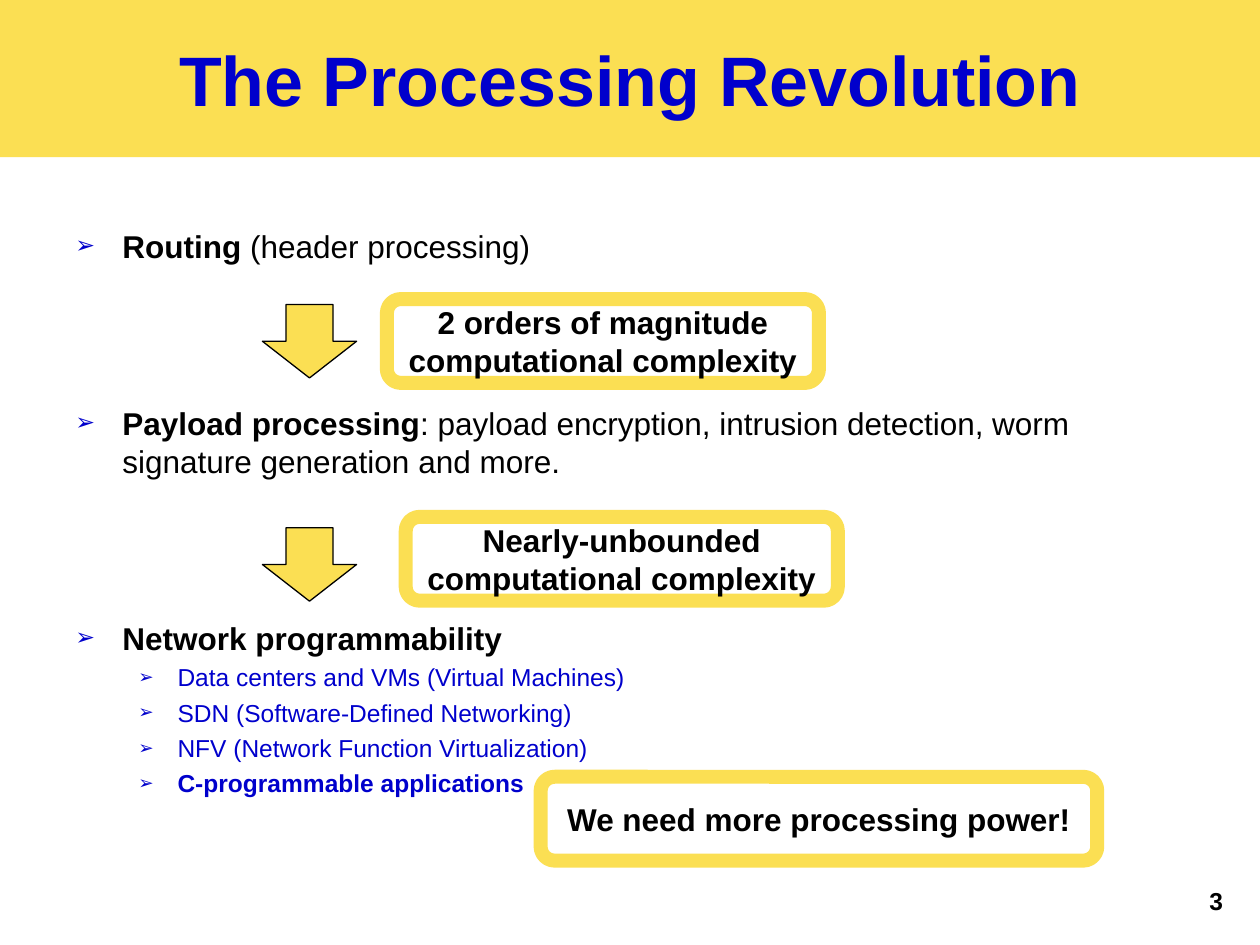
from lxml.etree import SubElement as add_node
from pptx import Presentation as Deck
from pptx.dml.color import RGBColor as Rgb
from pptx.enum.shapes import MSO_SHAPE as Shape
from pptx.enum.text import MSO_ANCHOR as Anchor, PP_ALIGN as Align
from pptx.oxml.ns import qn
from pptx.util import Cm, Pt

YELLOW, BLUE, BLACK, WHITE = "FBDF53", "0000CC", "000000", "FFFFFF"


def paint(color_format, value):
    color_format.rgb = Rgb.from_string(value)


def write(para, text, size, color=BLACK, bold=True):
    span = para.add_run()
    span.text = text
    for name, value in {"name": "Arial", "size": Pt(size), "bold": bold}.items():
        setattr(span.font, name, value)
    paint(span.font.color, color)


deck = Deck()
deck.slide_width, deck.slide_height = Cm(25.4), Cm(19.05)
page = deck.slides.add_slide(deck.slide_layouts[6])

number = page.shapes.add_textbox(Cm(24.13), Cm(17.73), Cm(1.27), Cm(1.32))
write(number.text_frame.paragraphs[0], "3", 14)

body = page.shapes.add_textbox(Cm(1.27), Cm(4.45), Cm(21.16), Cm(13.33))
body.text_frame.word_wrap = True
levels = [
    {"size": 18, "color": BLACK, "left": Cm(0.95), "hang": Cm(0.95)},
    {"size": 14, "color": BLUE, "left": Cm(2.06), "hang": Cm(0.79)},
]
items = [
    (0, 0, "Routing", " (header processing)"),
    (0, 79.5, "Payload processing",
     ": payload encryption, intrusion detection, worm signature generation and more."),
    (0, 79.5, "Network programmability", ""),
    (1, 3.4, "", "Data centers and VMs (Virtual Machines)"),
    (1, 3.4, "", "SDN (Software-Defined Networking)"),
    (1, 3.4, "", "NFV (Network Function Virtualization)"),
    (1, 3.4, "C-programmable applications", ""),
]
for index, (level, gap, strong, plain) in enumerate(items):
    frame = body.text_frame
    para = frame.add_paragraph() if index else frame.paragraphs[0]
    style = levels[level]
    for name, value in {"level": level, "space_before": Pt(gap)}.items():
        setattr(para, name, value)
    for text, bold in ((strong, True), (plain, False)):
        if text:
            write(para, text, style["size"], style["color"], bold)
    props = para._p.get_or_add_pPr()
    props.set("marL", str(style["left"]))
    props.set("indent", str(-style["hang"]))
    bullet_color = add_node(props, qn("a:buClr"))
    add_node(bullet_color, qn("a:srgbClr"), val=BLUE)
    add_node(props, qn("a:buSzPct"), val="75000")
    add_node(props, qn("a:buFont"), typeface="Arial")
    add_node(props, qn("a:buChar"), char="➢")

complexity = "computational complexity"
shapes = [
    (Shape.RECTANGLE, (0, 0, 25.4, 3.17), YELLOW, None, 0,
     ["The Processing Revolution"], 40, BLUE),
    (Shape.DOWN_ARROW, (5.29, 6.14, 1.9, 1.48), YELLOW, BLACK, 0.75, [], 18, BLACK),
    (Shape.ROUNDED_RECTANGLE, (7.8, 6.03, 8.71, 1.69), WHITE, YELLOW, 8,
     ["2 orders of magnitude", complexity], 18, BLACK),
    (Shape.DOWN_ARROW, (5.29, 10.64, 1.9, 1.48), YELLOW, BLACK, 0.75, [], 18, BLACK),
    (Shape.ROUNDED_RECTANGLE, (8.18, 10.42, 8.71, 1.69), WHITE, YELLOW, 8,
     ["Nearly-unbounded", complexity], 18, BLACK),
    (Shape.ROUNDED_RECTANGLE, (10.9, 15.66, 11.22, 1.69), WHITE, YELLOW, 8,
     ["We need more processing power!"], 18, BLACK),
]
for kind, place, fill, line, width, lines, size, color in shapes:
    box = page.shapes.add_shape(kind, *map(Cm, place))
    box.shadow.inherit = False
    box.fill.solid()
    paint(box.fill.fore_color, fill)
    if line:
        paint(box.line.color, line)
        box.line.width = Pt(width)
    else:
        box.line.fill.background()
    frame = box.text_frame
    for name, value in {"word_wrap": True, "vertical_anchor": Anchor.MIDDLE}.items():
        setattr(frame, name, value)
    for index, text in enumerate(lines):
        para = frame.add_paragraph() if index else frame.paragraphs[0]
        para.alignment = Align.CENTER
        write(para, text, size, color)

deck.save("out.pptx")
